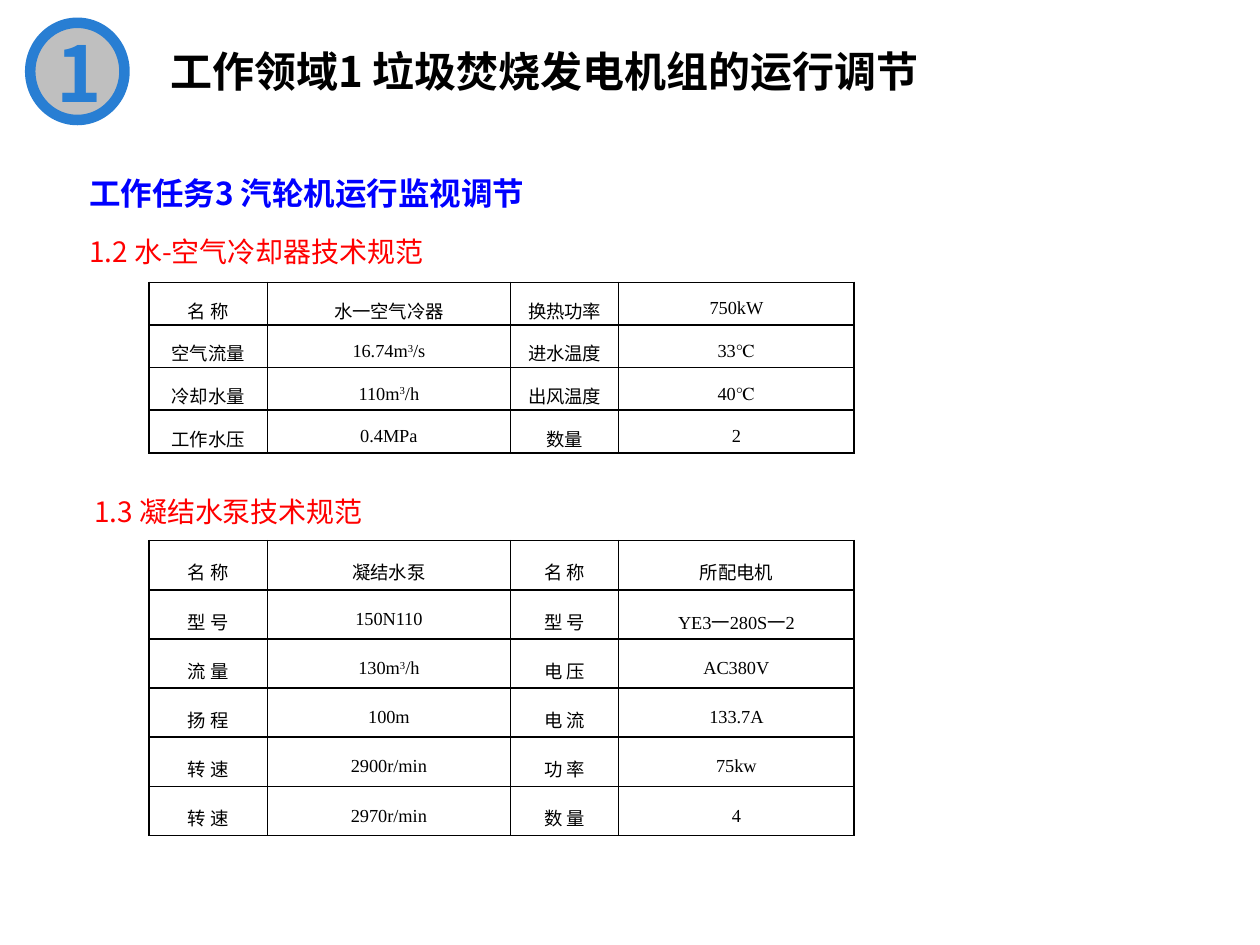
from itertools import product

from lxml.etree import SubElement
from pptx import Presentation
from pptx.dml.color import RGBColor as Color
from pptx.enum.shapes import MSO_SHAPE as Shape
from pptx.enum.text import MSO_ANCHOR as Anchor, MSO_AUTO_SIZE as AutoSize, PP_ALIGN as Align
from pptx.oxml.ns import qn
from pptx.util import Cm, Pt

THEME = {
    "sans": "Noto Sans CJK SC",
    "serif": "Times New Roman",
    "badge_fill": "BFBFBF",
    "badge_line": "287ED3",
    "border": "000000",
    "badge": {"size": 44, "color": "287ED3", "bold": True},
    "title": {"size": 24, "color": "000000", "bold": True},
    "task": {"size": 18, "color": "0000FF", "bold": True},
    "section": {"size": 16, "color": "FF0000", "bold": False},
    "cell": {"size": 10.5, "color": "000000", "bold": False},
}

# Headings: text, style, box in cm (left, top, width, height), line spacing, wrap
HEADINGS = [
    ("工作领域1 垃圾焚烧发电机组的运行调节", "title", (3.18, 0.79, 16.97, 1.27), None, True),
    ("工作任务3 汽轮机运行监视调节", "task", (1.55, 3.15, 9.88, 1.12), Pt(28), False),
    ("1.2 水-空气冷却器技术规范", "section", (1.55, 4.27, 22.5, 2.16), 1.5, True),
    ("1.3 凝结水泵技术规范", "section", (1.65, 9.5, 22.5, 2.16), 1.5, True),
]

# Tables: a tuple in a cell alternates normal and superscript text
COOLER = [
    ["名 称", "水一空气冷器", "换热功率", "750kW"],
    ["空气流量", ("16.74m", "3", "/s"), "进水温度", "33℃"],
    ["冷却水量", ("110m", "3", "/h"), "出风温度", "40℃"],
    ["工作水压", "0.4MPa", "数量", "2"],
]
PUMP = [
    ["名 称", "凝结水泵", "名 称", "所配电机"],
    ["型 号", "150N110", "型 号", "YE3一280S一2"],
    ["流 量", ("130m", "3", "/h"), "电 压", "AC380V"],
    ["扬 程", "100m", "电 流", "133.7A"],
    ["转 速", "2900r/min", "功 率", "75kw"],
    ["转 速", "2970r/min", "数 量", "4"],
]
TABLES = [(COOLER, 5.69, 0.86), (PUMP, 10.9, 0.99)]  # rows, top, row height
TABLE_LEFT = 3.0
COLUMN_WIDTHS = [2.39, 4.9, 2.18, 4.75]


def set_values(target, values):
    for name, value in values.items():
        setattr(target, name, value)


def add_run(paragraph, text, style, typeface):
    run = paragraph.add_run()
    run.text = text
    look = THEME[style]
    set_values(run.font, {"size": Pt(look["size"]), "bold": look["bold"], "name": typeface})
    run.font.color.rgb = Color.from_string(look["color"])
    SubElement(run.font._element, qn("a:ea"), typeface=THEME["sans"])
    return run


def add_badge(slide):
    badge = slide.shapes.add_shape(Shape.OVAL, Cm(0.61), Cm(0.46), Cm(1.9), Cm(1.96))
    badge.shadow.inherit = False
    badge.fill.solid()
    badge.fill.fore_color.rgb = Color.from_string(THEME["badge_fill"])
    badge.line.color.rgb = Color.from_string(THEME["badge_line"])
    badge.line.width = Pt(6)
    badge.text_frame.vertical_anchor = Anchor.MIDDLE
    paragraph = badge.text_frame.paragraphs[0]
    paragraph.alignment = Align.CENTER
    add_run(paragraph, "1", "badge", THEME["sans"])


def add_heading(slide, text, style, box, spacing, wrap):
    frame = slide.shapes.add_textbox(*map(Cm, box)).text_frame
    set_values(frame, {"word_wrap": wrap, "auto_size": AutoSize.SHAPE_TO_FIT_TEXT})
    paragraph = frame.paragraphs[0]
    paragraph.line_spacing = spacing
    add_run(paragraph, text, style, THEME["sans"])


def add_borders(cell):
    properties = cell._tc.get_or_add_tcPr()
    for side in ("lnL", "lnR", "lnT", "lnB"):
        line = SubElement(properties, qn(f"a:{side}"), w=str(Pt(1)))
        fill = SubElement(line, qn("a:solidFill"))
        SubElement(fill, qn("a:srgbClr"), val=THEME["border"])


def fill_cell(cell, content):
    set_values(cell, {
        "vertical_anchor": Anchor.MIDDLE,
        "margin_left": Cm(0.18), "margin_right": Cm(0.18),
        "margin_top": 0, "margin_bottom": 0,
    })
    add_borders(cell)
    cell.fill.background()
    paragraph = cell.text_frame.paragraphs[0]
    set_values(paragraph, {"alignment": Align.CENTER, "line_spacing": 1.5})
    parts = content if isinstance(content, tuple) else (content,)
    for index, part in enumerate(parts):
        run = add_run(paragraph, part, "cell", THEME["serif"])
        if index % 2:
            run.font._element.set("baseline", "30000")


def add_table(slide, rows, top, row_height):
    table = slide.shapes.add_table(
        len(rows), len(COLUMN_WIDTHS), Cm(TABLE_LEFT), Cm(top),
        Cm(sum(COLUMN_WIDTHS)), Cm(row_height * len(rows))).table
    set_values(table, {"first_row": False, "horz_banding": False})
    for column, width in zip(table.columns, COLUMN_WIDTHS):
        column.width = Cm(width)
    for row in table.rows:
        row.height = Cm(row_height)
    for row, column in product(range(len(rows)), range(len(COLUMN_WIDTHS))):
        fill_cell(table.cell(row, column), rows[row][column])


def main():
    presentation = Presentation()
    set_values(presentation, {"slide_width": Cm(25.4), "slide_height": Cm(19.05)})
    slide = presentation.slides.add_slide(presentation.slide_layouts[6])
    add_badge(slide)
    for heading in HEADINGS:
        add_heading(slide, *heading)
    for table in TABLES:
        add_table(slide, *table)
    presentation.save("out.pptx")


if __name__ == "__main__":
    main()
